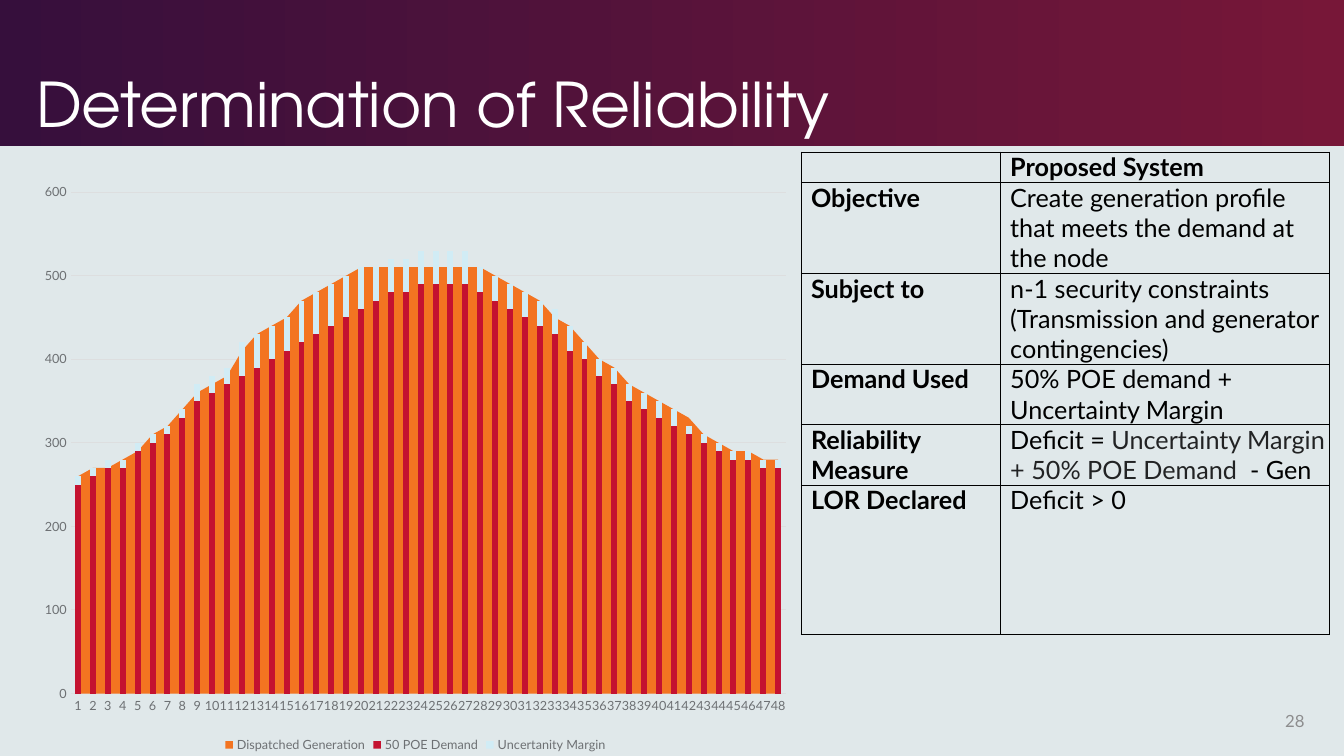
from dataclasses import dataclass

import pptx
import pptx.chart.data
import pptx.dml.color
import pptx.enum.chart
import pptx.enum.dml
import pptx.enum.shapes
import pptx.enum.text
import pptx.oxml
import pptx.oxml.ns
import pptx.util
from pptx.util import Cm, Pt

qn = pptx.oxml.ns.qn
NS = pptx.oxml.ns.nsdecls("a", "c")


@dataclass(frozen=True)
class Theme:
    background: str = "E0E8EA"
    band: tuple = ("360F3C", "771738")
    white: str = "FFFFFF"
    black: str = "000000"
    ink: str = "222324"
    label: str = "6D7073"
    number: str = "8D8D8E"
    rule: str = "DDDEDF"
    series: tuple = ("F37421", "C41230", "D1ECF5")
    heading_font: str = "TeX Gyre Adventor"
    body_font: str = "Lato"
    title_size: int = 44
    table_size: int = 18
    number_size: int = 12
    label_size: int = 9
    chart_size: int = 10


T = Theme()

GENERATION = [260, 270, 270, 280, 290, 310, 320, 340, 360, 370, 380, 410,
              430, 440, 450, 470, 480, 490, 500, 510, 510, 510, 510, 510,
              510, 510, 510, 510, 500, 490, 480, 470, 450, 440, 420, 400,
              390, 370, 360, 350, 340, 330, 310, 300, 290, 290, 280, 280]
DEMAND = [250, 260, 270, 270, 290, 300, 310, 330, 350, 360, 370, 380,
          390, 400, 410, 420, 430, 440, 450, 460, 470, 480, 480, 490,
          490, 490, 490, 480, 470, 460, 450, 440, 430, 410, 400, 380,
          370, 350, 340, 330, 320, 310, 300, 290, 280, 280, 270, 270]
MARGIN = [10] * 8 + [20] * 3 + [40] * 4 + [50] * 5 + [40] * 7 + [30] * 7 + [20] * 7 + [10] * 7

TABLE_ROWS = [
    (0.76, "", [("Proposed System", T.black)]),
    (2.29, "Objective", [("Create generation profile that meets the demand at the node", T.black)]),
    (2.29, "Subject to", [("n-1 security constraints\n(Transmission and generator contingencies)", T.black)]),
    (1.52, "Demand Used", [("50% POE demand + Uncertainty Margin", T.black)]),
    (1.52, "Reliability Measure", [("Deficit = ", T.black),
                                   ("Uncertainty Margin + 50% POE Demand ", T.ink),
                                   (" - Gen", T.black)]),
    (3.76, "LOR Declared", [("Deficit > 0", T.black)]),
]


def rgb(value):
    return pptx.dml.color.RGBColor.from_string(value)


def apply(target, formats):
    for name, value in formats.items():
        setattr(target, name, value)


def style_font(font, size, color, name=T.body_font, bold=False):
    apply(font, {"size": Pt(size), "name": name, "bold": bold})
    font.color.rgb = rgb(color)


def style_line(line, color, width):
    line.color.rgb = rgb(color)
    line.width = Pt(width)


def add_text(s, box, text, size, color, name, formats, paragraph_formats):
    tf = s.shapes.add_textbox(*map(Cm, box)).text_frame
    apply(tf, {"word_wrap": True, **formats})
    p = tf.paragraphs[0]
    apply(p, paragraph_formats)
    r = p.add_run()
    r.text = text
    style_font(r.font, size, color, name)


def add_header(s, box, title):
    left, top, width, height = box
    sp = s.shapes.add_shape(pptx.enum.shapes.MSO_SHAPE.RECTANGLE, *map(Cm, box))
    sp.shadow.inherit = False
    sp.line.fill.background()
    sp.fill.gradient()
    sp.fill.gradient_angle = 0
    for stop, color in zip(sp.fill.gradient_stops, T.band):
        stop.color.rgb = rgb(color)
    add_text(s, (left + 0.66, top + 0.38, 25.02, height - 0.38), title,
             T.title_size, T.white, T.heading_font,
             {"vertical_anchor": pptx.enum.text.MSO_ANCHOR.BOTTOM}, {"line_spacing": 0.9})


def move_first_series_to_area(chart):
    bars = chart.element.find(".//" + qn("c:barChart"))
    ser = bars.find(qn("c:ser"))
    area = pptx.oxml.parse_xml(
        f'<c:areaChart {NS}><c:grouping val="stacked"/><c:varyColors val="0"/></c:areaChart>')
    bars.addprevious(area)
    area.append(ser)
    for flag in ser.findall(qn("c:invertIfNegative")):
        ser.remove(flag)
    for axis in bars.findall(qn("c:axId")):
        area.append(pptx.oxml.parse_xml(f'<c:axId {NS} val="{axis.get("val")}"/>'))


def set_plot_area(chart, box, plot_box):
    plot_area = chart.element.find(".//" + qn("c:plotArea"))
    for layout in plot_area.findall(qn("c:layout")):
        plot_area.remove(layout)
    sizes = "".join(f'<c:{k} val="{length / full}"/>'
                    for k, length, full in zip("xywh", plot_box, box[2:] * 2))
    plot_area.insert(0, pptx.oxml.parse_xml(
        f'<c:layout {NS}><c:manualLayout><c:layoutTarget val="inner"/>'
        f'<c:xMode val="edge"/><c:yMode val="edge"/>{sizes}</c:manualLayout></c:layout>'))


def add_profile_chart(s, box):
    data = pptx.chart.data.CategoryChartData(number_format="0")
    data.categories = [str(i) for i in range(1, 49)]
    data.add_series("Dispatched Generation", GENERATION)
    data.add_series("50 POE Demand", DEMAND)
    data.add_series("Uncertanity Margin", MARGIN)
    enums = pptx.enum.chart
    chart = s.shapes.add_chart(enums.XL_CHART_TYPE.COLUMN_STACKED, *map(Cm, box), data).chart
    style_font(chart.font, T.chart_size, T.ink)
    apply(chart, {"has_title": False, "has_legend": True})
    apply(chart.legend, {"position": enums.XL_LEGEND_POSITION.BOTTOM, "include_in_layout": False})
    style_font(chart.legend.font, T.label_size, T.label)

    plot = chart.plots[0]
    apply(plot, {"gap_width": 150, "overlap": 100, "vary_by_categories": False})
    for series, color in zip(plot.series, T.series):
        series.format.fill.solid()
        series.format.fill.fore_color.rgb = rgb(color)

    cat, val = chart.category_axis, chart.value_axis
    for axis in (cat, val):
        apply(axis, {"major_tick_mark": enums.XL_TICK_MARK.NONE,
                     "minor_tick_mark": enums.XL_TICK_MARK.NONE})
        style_font(axis.tick_labels.font, T.label_size, T.label)
    style_line(cat.format.line, T.rule, 0.75)
    cat._element.find(qn("c:txPr")).find(qn("a:bodyPr")).set("rot", "-60000000")
    cat._element.find(qn("c:noMultiLvlLbl")).addprevious(
        pptx.oxml.parse_xml(f'<c:tickLblSkip {NS} val="1"/>'))
    apply(val, {"minimum_scale": 0, "maximum_scale": 600, "major_unit": 100,
                "has_major_gridlines": True})
    apply(val.tick_labels, {"number_format": "0", "number_format_is_linked": False})
    val.format.line.fill.background()
    style_line(val.major_gridlines.format.line, T.rule, 0.75)
    if val._element.find(qn("c:crossBetween")) is None:
        val._element.find(qn("c:crosses")).addnext(
            pptx.oxml.parse_xml(f'<c:crossBetween {NS} val="between"/>'))
    move_first_series_to_area(chart)
    set_plot_area(chart, box, (1.04, 0.5, 18.02, 12.64))


def fill_cell(cell, runs, bold):
    apply(cell, {"margin_left": Cm(0.25), "margin_right": 0, "margin_top": 0, "margin_bottom": 0})
    cell.fill.background()
    for i, side in enumerate(("lnL", "lnR", "lnT", "lnB")):
        cell._tc.tcPr.insert(i, pptx.oxml.parse_xml(
            f'<a:{side} {NS} w="6350"><a:solidFill><a:srgbClr val="{T.black}"/>'
            f'</a:solidFill></a:{side}>'))
    p = cell.text_frame.paragraphs[0]
    style_font(p.font, T.table_size, T.black)
    for text, color in runs:
        for i, line in enumerate(text.split("\n")):
            if i:
                p.add_line_break()
            r = p.add_run()
            r.text = line
            style_font(r.font, T.table_size, color, bold=bold)


def add_measures_table(s, box):
    table = s.shapes.add_table(len(TABLE_ROWS), 2, *map(Cm, box)).table
    apply(table, {"first_row": False, "horz_banding": False})
    for column, width in zip(table.columns, (5.02, box[2] - 5.02)):
        column.width = Cm(width)
    for i, (height, heading, runs) in enumerate(TABLE_ROWS):
        table.rows[i].height = Cm(height)
        fill_cell(table.cell(i, 0), [(heading, T.black)] if heading else [], True)
        fill_cell(table.cell(i, 1), runs, i == 0)
    table.cell(0, 1).vertical_anchor = pptx.enum.text.MSO_ANCHOR.BOTTOM


def main():
    prs = pptx.Presentation()
    apply(prs, {"slide_width": Cm(33.87), "slide_height": Cm(19.05)})
    s = prs.slides.add_slide(prs.slide_layouts[6])
    s.background.fill.solid()
    s.background.fill.fore_color.rgb = rgb(T.background)
    add_header(s, (0, 0, 33.87, 3.68), "Determination of Reliability")
    add_text(s, (31.53, 17.65, 1.6, 1.02), "28", T.number_size, T.number, T.body_font,
             {"vertical_anchor": pptx.enum.text.MSO_ANCHOR.MIDDLE},
             {"alignment": pptx.enum.text.PP_ALIGN.RIGHT})
    add_profile_chart(s, (0.74, 4.34, 19.46, 14.73))
    add_measures_table(s, (20.19, 3.83, 13.31, 12.14))
    prs.save("out.pptx")


if __name__ == "__main__":
    main()
